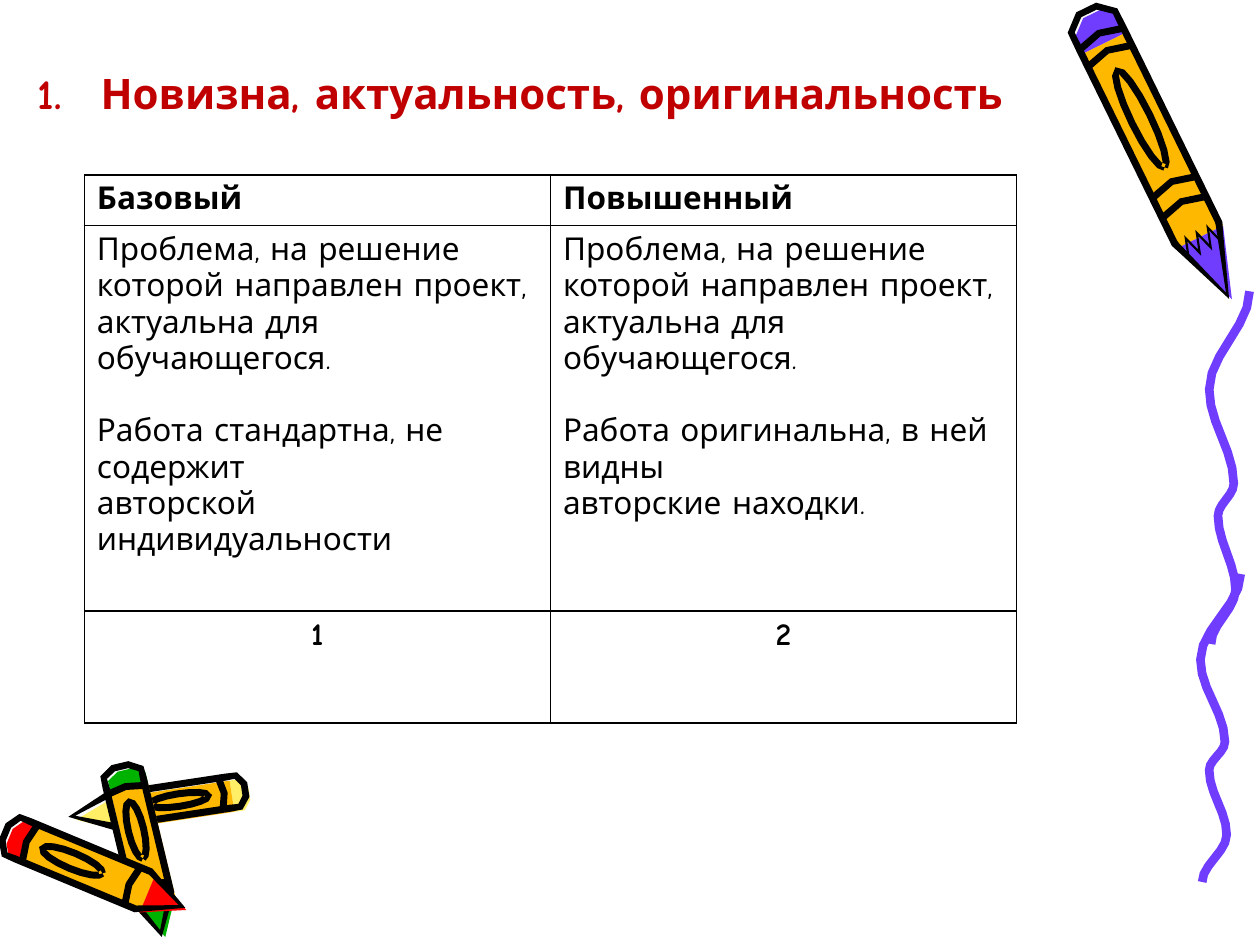
"""Build the slide on novelty, relevance and originality with its crayon decorations."""
from dataclasses import dataclass
from math import cos, hypot, pi, sin

from lxml.etree import SubElement
from pptx import Presentation
from pptx.dml.color import RGBColor
from pptx.enum.text import MSO_AUTO_SIZE, PP_ALIGN
from pptx.oxml.ns import qn
from pptx.shapes.shapetree import GroupShapes
from pptx.slide import Slide
from pptx.table import _Cell
from pptx.text.text import _Paragraph
from pptx.util import Pt

Point = tuple[float, float]

FONT = "Comic Neue"
BLACK = RGBColor(0x00, 0x00, 0x00)
CRIMSON = RGBColor(0xC0, 0x00, 0x00)
PURPLE = RGBColor(0x70, 0x3D, 0xFF)
ORANGE = RGBColor(0xFF, 0xB8, 0x00)
YELLOW = RGBColor(0xFF, 0xEF, 0x66)
RED = RGBColor(0xFF, 0x00, 0x00)
GREEN = RGBColor(0x00, 0xB2, 0x00)
PALE = RGBColor(0xF8, 0xF8, 0xF8)

UNITS_PER_POINT = 100
INK = 4
COLOR_SHIFT = (2.5, 2)
CAP_END, SHOULDER = 0.1, 0.78
OVAL_CENTER, OVAL_LENGTH, OVAL_WIDTH, OVAL_STEPS = 0.38, 0.17, 0.2, 16
SHAVING_STEPS = 8


@dataclass(frozen=True)
class Crayon:
    cap: Point
    tip: Point
    width: float
    color: RGBColor
    bands: tuple[float, ...] = (0.14, 0.72)
    shavings: bool = False

    def place(self, outline: list[Point]) -> list[Point]:
        run, rise = self.tip[0] - self.cap[0], self.tip[1] - self.cap[1]
        spread = self.width / hypot(run, rise)
        return [(self.cap[0] + along * run - across * spread * rise,
                 self.cap[1] + along * rise + across * spread * run)
                for along, across in outline]


@dataclass(frozen=True)
class Ribbon:
    shift: float
    top: float
    stretch: float


@dataclass(frozen=True)
class Entry:
    paragraphs: tuple[str, ...]
    bold: bool = False
    alignment: PP_ALIGN = PP_ALIGN.LEFT


CRAYONS = (
    Crayon((621.5, 6), (701.5, 169), 28, PURPLE, (0.1, 0.16, 0.62, 0.69), True),
    Crayon((140, 451.5), (41, 466.5), 18, YELLOW),
    Crayon((69, 438), (92, 533.5), 22, GREEN),
    Crayon((3, 476), (104, 518), 23, RED),
)
CAP = [(CAP_END, -0.5), (0.04, -0.5), (0, -0.2), (0, 0.2), (0.04, 0.5), (CAP_END, 0.5)]
BODY = [(CAP_END, -0.5), (SHOULDER, -0.5), (SHOULDER, 0.5), (CAP_END, 0.5)]
TIP = [(SHOULDER, -0.5), (1, 0), (SHOULDER, 0.5)]
SILHOUETTE = CAP + TIP[::-1]
OVAL = [(OVAL_CENTER + OVAL_LENGTH * cos(2 * pi * step / OVAL_STEPS),
         OVAL_WIDTH * sin(2 * pi * step / OVAL_STEPS)) for step in range(OVAL_STEPS + 1)]
SHAVINGS = [(SHOULDER + 0.06 * (step % 2), step / SHAVING_STEPS - 0.5)
            for step in range(SHAVING_STEPS + 1)]

RIBBON_TURNS = ((709, 328), (686, 377), (700, 424), (691, 440), (701, 477), (687, 504))
RIBBON_THICKNESS, RIBBON_STEPS = 5, 6
RIBBONS = (Ribbon(0, 328, 1), Ribbon(5, 166.5, 1.145))

ROWS = (
    (Entry(("Базовый",), True), Entry(("Повышенный",), True)),
    (Entry(("Проблема, на решение", "которой направлен проект, актуальна для", "обучающегося.",
            "Работа стандартна, не содержит", "авторской индивидуальности")),
     Entry(("Проблема, на решение", "которой направлен проект,", "актуальна для обучающегося.",
            "Работа оригинальна, в ней видны", "авторские находки."))),
    (Entry(("1",), True, PP_ALIGN.CENTER), Entry(("2",), True, PP_ALIGN.CENTER)),
)
ROW_HEIGHTS = (26.6, 220.3, 64)
COLUMN_WIDTH = 266.4
SECOND_STATEMENT = 3


def draw_patch(shapes: GroupShapes, outline: list[Point], color: RGBColor) -> None:
    start, *others = [(round(x * UNITS_PER_POINT), round(y * UNITS_PER_POINT))
                      for x, y in outline]
    builder = shapes.build_freeform(*start, scale=Pt(1) / UNITS_PER_POINT)
    builder.add_line_segments(others, close=True)
    shape = builder.convert_to_shape()
    shape.shadow.inherit = False
    shape.fill.solid()
    shape.fill.fore_color.rgb = color
    shape.line.fill.background()


def thicken(line: list[Point], thickness: float) -> list[Point]:
    left, right = [], []
    for index, (x, y) in enumerate(line):
        before, after = line[max(index - 1, 0)], line[min(index + 1, len(line) - 1)]
        run, rise = after[0] - before[0], after[1] - before[1]
        reach = thickness / 2 / hypot(run, rise)
        left.append((x - rise * reach, y + run * reach))
        right.append((x + rise * reach, y - run * reach))
    return left + right[::-1]


def draw_crayon(slide: Slide, crayon: Crayon) -> None:
    shapes = slide.shapes.add_group_shape().shapes
    draw_patch(shapes, crayon.place(SILHOUETTE), PALE)
    for part, color in ((CAP, crayon.color), (BODY, ORANGE), (TIP, crayon.color)):
        shifted = [(x + COLOR_SHIFT[0], y + COLOR_SHIFT[1]) for x, y in crayon.place(part)]
        draw_patch(shapes, shifted, color)
    strokes = [SILHOUETTE + SILHOUETTE[:1], OVAL]
    strokes += [[(band, -0.5), (band - 0.02, 0), (band, 0.5)] for band in crayon.bands]
    if crayon.shavings:
        strokes.append(SHAVINGS)
    for stroke in strokes:
        draw_patch(shapes, thicken(crayon.place(stroke), INK), BLACK)


def ribbon_line() -> list[Point]:
    line = [RIBBON_TURNS[0]]
    for (left, top), (right, bottom) in zip(RIBBON_TURNS, RIBBON_TURNS[1:]):
        for step in range(1, RIBBON_STEPS + 1):
            progress = step / RIBBON_STEPS
            eased = (1 - cos(pi * progress)) / 2
            line.append((left + (right - left) * eased, top + (bottom - top) * progress))
    return line


def draw_ribbons(slide: Slide) -> None:
    shapes = slide.shapes.add_group_shape().shapes
    line = ribbon_line()
    first_top = RIBBON_TURNS[0][1]
    for ribbon in RIBBONS:
        moved = [(x + ribbon.shift, ribbon.top + (y - first_top) * ribbon.stretch)
                 for x, y in line]
        draw_patch(shapes, thicken(moved, RIBBON_THICKNESS), PURPLE)


def format_runs(paragraph: _Paragraph, size: float, color: RGBColor, bold: bool) -> None:
    for run in paragraph.runs:
        run.font.name = FONT
        run.font.size = Pt(size)
        run.font.color.rgb = color
        run.font.bold = bold


def add_title(slide: Slide) -> None:
    text_frame = slide.shapes.add_textbox(Pt(14.4), Pt(20.9), Pt(589.7), Pt(51.1)).text_frame
    text_frame.text = "Новизна, актуальность, оригинальность"
    text_frame.word_wrap = True
    text_frame.auto_size = MSO_AUTO_SIZE.SHAPE_TO_FIT_TEXT
    paragraph = text_frame.paragraphs[0]
    paragraph.alignment = PP_ALIGN.JUSTIFY
    paragraph.line_spacing = 1.5
    properties = paragraph._p.get_or_add_pPr()
    properties.set("marL", str(Pt(36)))
    properties.set("indent", str(-Pt(36)))
    SubElement(properties, qn("a:buFont"), typeface=FONT)
    SubElement(properties, qn("a:buAutoNum"), type="arabicPeriod")
    format_runs(paragraph, 24, CRIMSON, True)


def fill_cell(cell: _Cell, entry: Entry) -> None:
    cell.text_frame.text = "\n".join(entry.paragraphs)
    for index, paragraph in enumerate(cell.text_frame.paragraphs):
        paragraph.alignment = entry.alignment
        if index == SECOND_STATEMENT:
            paragraph.space_before = Pt(20.6)
        format_runs(paragraph, 18, BLACK, entry.bold)
    properties = cell._tc.get_or_add_tcPr()
    for side in ("lnL", "lnR", "lnT", "lnB"):
        border = SubElement(properties, qn(f"a:{side}"), w=str(Pt(1)))
        SubElement(SubElement(border, qn("a:solidFill")), qn("a:srgbClr"), val=str(BLACK))
    cell.fill.background()


def add_criteria_table(slide: Slide) -> None:
    table = slide.shapes.add_table(len(ROWS), len(ROWS[0]), Pt(48.2), Pt(100.1),
                                   Pt(COLUMN_WIDTH * 2), Pt(sum(ROW_HEIGHTS))).table
    table.first_row = table.horz_banding = False
    for row, height, entries in zip(table.rows, ROW_HEIGHTS, ROWS):
        row.height = Pt(height)
        for cell, entry in zip(row.cells, entries):
            fill_cell(cell, entry)


def main() -> None:
    presentation = Presentation()
    presentation.slide_width, presentation.slide_height = Pt(720), Pt(540)
    slide = presentation.slides.add_slide(presentation.slide_layouts[6])
    for crayon in CRAYONS:
        draw_crayon(slide, crayon)
    draw_ribbons(slide)
    add_title(slide)
    add_criteria_table(slide)
    presentation.save("out.pptx")


if __name__ == "__main__":
    main()
